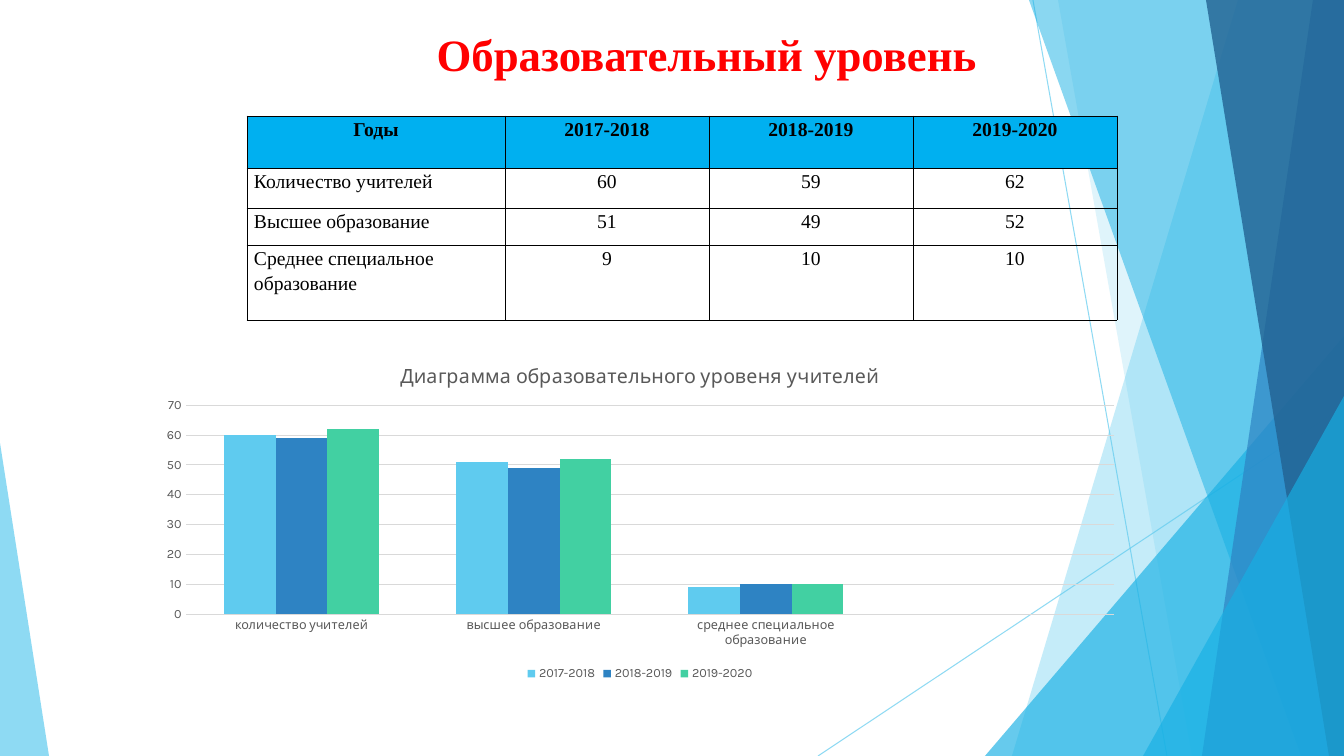
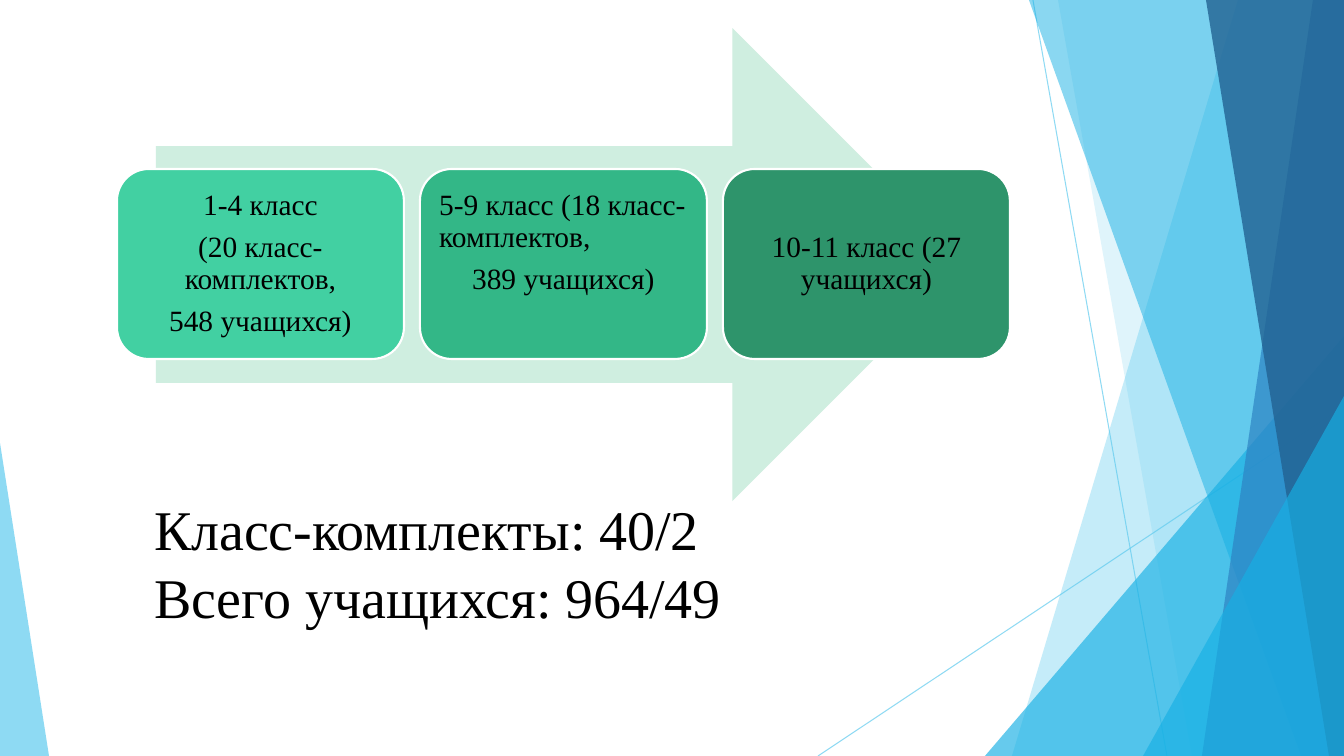
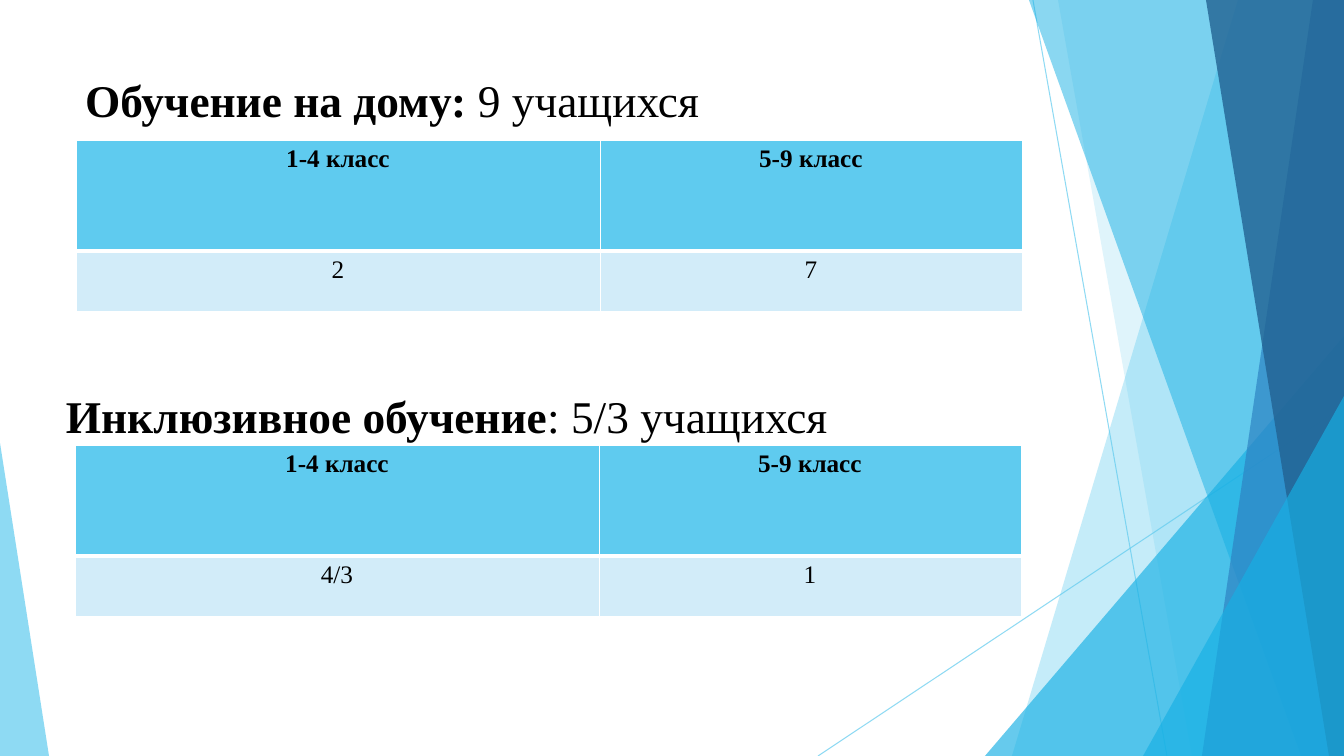
from itertools import accumulate
from pptx import Presentation
from pptx.chart.data import CategoryChartData
from pptx.dml.color import RGBColor
from pptx.enum.chart import XL_CHART_TYPE as ChartType, XL_LEGEND_POSITION as LegendPosition
from pptx.enum.chart import XL_TICK_MARK as TickMark
from pptx.enum.shapes import MSO_CONNECTOR as Connector, MSO_SHAPE as Shape
from pptx.enum.text import MSO_ANCHOR as Anchor, MSO_AUTO_SIZE as AutoSize, PP_ALIGN as Align
from pptx.oxml import parse_xml
from pptx.oxml.ns import nsdecls, qn
from pptx.oxml.xmlchemy import OxmlElement
from pptx.util import Pt

WIDTH, HEIGHT = 1344, 756
SCALE = 12192000 / WIDTH
SERIF, SANS = "Times New Roman", "Karla"
COLORS = {
    "black": "000000", "white": "FFFFFF", "red": "FF0000", "gray": "595959", "grid": "D9D9D9",
    "sky": "5FCBEF", "azure": "17B0E4", "blue": "2E83C3", "navy": "226292",
    "header": "00B0F0", "pale": "D2ECF9",
    "mint": "42D0A2", "green": "33B787", "forest": "2E946B", "arrow": "CFEEE0",
}


def px(length):
    return round(length * SCALE)


def place(box):
    return [px(length) for length in box]


def rgb(name):
    return RGBColor.from_string(COLORS[name])


# Shared formatting
def style_shape(shape, color, line=None):
    shape.shadow.inherit = False
    shape.fill.solid()
    shape.fill.fore_color.rgb = rgb(color)
    if line:
        shape.line.color.rgb = rgb(line)
        shape.line.width = Pt(1.5)
    else:
        shape.line.fill.background()


def set_alpha(shape, percent):
    for color in shape.element.spPr.iter(qn("a:srgbClr")):
        alpha = OxmlElement("a:alpha")
        alpha.set("val", str(percent * 1000))
        color.append(alpha)


def style_font(font, size, color="black", name=SERIF, bold=False):
    font.name, font.size, font.bold = name, Pt(size), bold
    font.color.rgb = rgb(color)


def write_para(para, spans, size, color="black", align=Align.LEFT):
    para.alignment = align
    for text, bold in spans:
        span = para.add_run()
        span.text = text
        style_font(span.font, size, color, bold=bold)


def write_heading(shape, box, lines, size, color="black", align=Align.LEFT,
                  anchor=Anchor.TOP, top=5, bottom=5, spacing=None):
    shape.left, shape.top, shape.width, shape.height = place(box)
    frame = shape.text_frame
    frame.word_wrap, frame.auto_size = True, AutoSize.NONE
    frame.vertical_anchor = anchor
    frame.margin_top, frame.margin_bottom = px(top), px(bottom)
    for index, spans in enumerate(lines):
        para = frame.add_paragraph() if index else frame.paragraphs[0]
        write_para(para, spans, size, color, align)
        if spacing:
            para.line_spacing = Pt(spacing)


# Faceted backdrop, kept on the slide master
def add_backdrop(deck, page):
    group = page.shapes.add_group_shape()
    shapes = group.shapes

    def ray(start, end):
        line = shapes.add_connector(Connector.STRAIGHT, *place(start + end))
        line.line.color.rgb = rgb("sky")
        line.line.width = Pt(0.75)
        line.element.spPr.append(OxmlElement("a:effectLst"))
        set_alpha(line, 70)

    def band(top_x, bottom_x, color, alpha):
        builder = shapes.build_freeform(top_x, 0, scale=SCALE)
        builder.add_line_segments([(WIDTH, 0), (WIDTH, HEIGHT), (bottom_x, HEIGHT)])
        shape = builder.convert_to_shape()
        style_shape(shape, color)
        set_alpha(shape, alpha)

    def corner(left, top, width, apex, color, alpha):
        shape = shapes.add_shape(Shape.ISOSCELES_TRIANGLE,
                                 *place((left, top, width, HEIGHT - top)))
        shape.adjustments[0] = apex
        style_shape(shape, color)
        set_alpha(shape, alpha)

    ray((1033, 0), (1167, HEIGHT))
    ray((WIDTH, 406), (818, HEIGHT))
    band(1238, 1012, "sky", 36)
    band(1058, 1192, "sky", 20)
    corner(985, 336, 359, 1, "azure", 66)
    band(1029, 1301, "azure", 50)
    band(1313, 1202, "blue", 70)
    band(1206, 1329, "navy", 80)
    corner(1143, 396, 201, 1, "azure", 66)
    corner(0, 443, 49, 0, "sky", 70)

    # Fresh ids, then behind everything else on the master
    for number, node in enumerate(group.element.iter(qn("p:cNvPr")), 100):
        node.set("id", str(number))
    deck.slide_master.shapes.element.insert(2, group.element)


# Tables
def set_borders(cell, color, bottom=0.5):
    properties = cell._tc.get_or_add_tcPr()
    for index, side in enumerate(("lnL", "lnR", "lnT", "lnB")):
        width = Pt(bottom if side == "lnB" else 0.5)
        properties.insert(index, parse_xml(
            f'<a:{side} {nsdecls("a")} w="{width}"><a:solidFill>'
            f'<a:srgbClr val="{COLORS[color]}"/></a:solidFill></a:{side}>'))


def add_grid(page, left, top, widths, heights, rows, style_cell):
    box = place((left, top, sum(widths), sum(heights)))
    table = page.shapes.add_table(len(rows), len(widths), *box).table
    table.first_row = table.horz_banding = False
    for column, width in zip(table.columns, widths):
        column.width = px(width)
    for row, height in zip(table.rows, heights):
        row.height = px(height)
    for r, texts in enumerate(rows):
        for c, text in enumerate(texts):
            style_cell(table.cell(r, c), text, r, c)


def style_level_cell(cell, text, row, column):
    head = row == 0
    cell.margin_left = cell.margin_right = px(7)
    cell.margin_top = cell.margin_bottom = 0
    para = cell.text_frame.paragraphs[0]
    write_para(para, [(text, head)], 14, align=Align.CENTER if head or column else Align.LEFT)
    para.line_spacing = 1.15
    if head:
        para.space_before = para.space_after = Pt(6)
        cell.fill.solid()
        cell.fill.fore_color.rgb = rgb("header")
    else:
        cell.fill.background()
    set_borders(cell, "black")


def style_class_cell(cell, text, row, column):
    head = row == 0
    write_para(cell.text_frame.paragraphs[0], [(text, head)], 18, align=Align.CENTER)
    cell.fill.solid()
    cell.fill.fore_color.rgb = rgb("sky" if head else "pale")
    set_borders(cell, "white", bottom=3 if head else 0.5)


def add_class_table(page, left, top, values):
    add_grid(page, left, top, (524, 422), (111, 60),
             [("1-4 класс", "5-9 класс"), values], style_class_cell)


# Column chart
def add_level_chart(page, box):
    data = CategoryChartData()
    data.categories = ["количество учителей", "высшее образование",
                       "среднее специальное образование", ""]
    series = [("2017-2018", (60, 51, 9, None), "sky"),
              ("2018-2019", (59, 49, 10, None), "blue"),
              ("2019-2020", (62, 52, 10, None), "mint")]
    for name, values, _ in series:
        data.add_series(name, values)
    chart = page.shapes.add_chart(ChartType.COLUMN_CLUSTERED, *place(box), data).chart
    style_font(chart.font, 10, name=SANS)

    title = chart.chart_title.text_frame.paragraphs[0].add_run()
    title.text = "Диаграмма образовательного уровеня учителей"
    style_font(title.font, 14, "gray", SANS)

    plot = chart.plots[0]
    plot.gap_width, plot.overlap, plot.vary_by_categories = 150, 0, False
    for item, (_, _, color) in zip(plot.series, series):
        item.format.fill.solid()
        item.format.fill.fore_color.rgb = rgb(color)

    for axis in (chart.category_axis, chart.value_axis):
        axis.major_tick_mark = axis.minor_tick_mark = TickMark.NONE
        axis.format.line.fill.background()
        style_font(axis.tick_labels.font, 9, "gray", SANS)
    scale = chart.value_axis
    scale.minimum_scale, scale.maximum_scale, scale.major_unit = 0, 70, 10
    scale.major_gridlines.format.line.color.rgb = rgb("grid")
    scale.major_gridlines.format.line.width = Pt(0.75)

    chart.has_legend = True
    chart.legend.position = LegendPosition.BOTTOM
    chart.legend.include_in_layout = False
    style_font(chart.legend.font, 9, "gray", SANS)

    # Fixed inner plot area, as shares of the chart box
    area = chart._chartSpace.find(".//" + qn("c:plotArea"))
    for old in area.findall(qn("c:layout")):
        area.remove(old)
    shares = "".join(f'<c:{key} val="{value}"/>' for key, value in
                     (("x", 0.04), ("y", 0.17), ("w", 0.94), ("h", 0.62)))
    area.insert(0, parse_xml(
        f'<c:layout {nsdecls("c")}><c:manualLayout><c:layoutTarget val="inner"/>'
        f'<c:xMode val="edge"/><c:yMode val="edge"/>{shares}</c:manualLayout></c:layout>'))


# Arrow with a row of cards
def add_class_arrow(page, left, top):
    arrow = page.shapes.add_shape(Shape.RIGHT_ARROW, *place((left + 39, top, 813, 473)))
    style_shape(arrow, "arrow")
    cards = [
        ("mint", 18, [("1-4 класс", Align.CENTER), ("(20 класс-комплектов,", Align.CENTER),
                      ("548 учащихся)", Align.CENTER)]),
        ("green", 60, [("5-9 класс (18 класс-комплектов,", Align.LEFT),
                       ("389 учащихся)", Align.CENTER)]),
        ("forest", 18, [("10-11 класс (27 учащихся)", Align.CENTER)]),
    ]
    width, gap = 287, 16
    lefts = accumulate([width + gap] * (len(cards) - 1), initial=left)
    for card_left, (color, bottom, lines) in zip(lefts, cards):
        card = page.shapes.add_shape(Shape.ROUNDED_RECTANGLE,
                                     *place((card_left, top + 141, width, 190)))
        style_shape(card, color, "white")
        frame = card.text_frame
        frame.word_wrap, frame.vertical_anchor = True, Anchor.MIDDLE
        frame.margin_left = frame.margin_right = px(10)
        frame.margin_top, frame.margin_bottom = px(18), px(bottom)
        for index, (text, align) in enumerate(lines):
            para = frame.add_paragraph() if index else frame.paragraphs[0]
            write_para(para, [(text, False)], 21, align=align)
            para.line_spacing, para.space_after = 0.9, Pt(7.35)


# Slides
def build_level_page(page):
    add_grid(page, 247, 116, (258, 204, 204, 204), (52, 40, 37, 75), [
        ("Годы", "2017-2018", "2018-2019", "2019-2020"),
        ("Количество учителей", "60", "59", "62"),
        ("Высшее образование", "51", "49", "52"),
        ("Среднее специальное образование", "9", "10", "10"),
    ], style_level_cell)
    write_heading(page.shapes.title, (184, 21, 803, 95), [[("Образовательный уровень", True)]],
                  32, "red", Align.RIGHT, Anchor.MIDDLE, bottom=34)
    add_level_chart(page, (146, 348, 988, 337))


def build_classes_page(page):
    write_heading(page.shapes.title, (144, 489, 948, 145),
                  [[("Класс-комплекты: 40/2", False)], [("Всего учащихся: 964/49", False)]],
                  40, top=6, spacing=48)
    add_class_arrow(page, 117, 28)


def build_forms_page(page):
    write_heading(page.shapes.title, (75, 68, 948, 145),
                  [[("Обучение на дому: ", True), ("9 учащихся", False)]], 32.4, top=4)
    add_class_table(page, 76, 140, ("2", "7"))
    add_class_table(page, 75, 445, ("4/3", "1"))
    # The heading lies over the table, so its descenders stay whole
    box = (56, 330, 948, 145)
    write_heading(page.shapes.add_textbox(*place(box)), box,
                  [[("Инклюзивное обучение", True), (": 5/3 учащихся", False)]], 32.4, top=58)


def main():
    deck = Presentation()
    deck.slide_width, deck.slide_height = px(WIDTH), px(HEIGHT)
    title_only = deck.slide_layouts[5]
    builders = (build_level_page, build_classes_page, build_forms_page)
    pages = [deck.slides.add_slide(title_only) for _ in builders]
    add_backdrop(deck, pages[0])
    for build, page in zip(builders, pages):
        build(page)
    deck.save("out.pptx")


if __name__ == "__main__":
    main()
